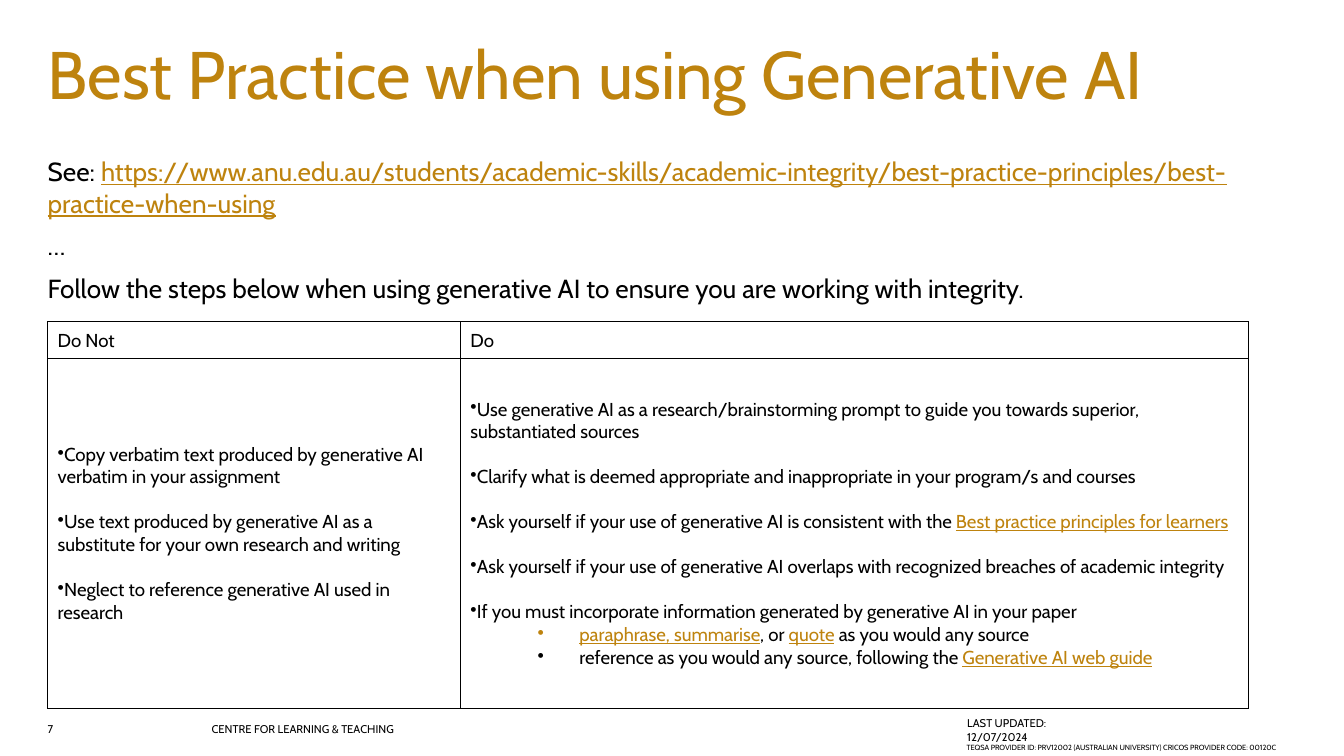
from lxml.etree import SubElement
from pptx import Presentation
from pptx.dml.color import RGBColor
from pptx.enum.text import MSO_ANCHOR, MSO_AUTO_SIZE, PP_ALIGN
from pptx.oxml.ns import qn
from pptx.util import Cm, Pt

GOLD = RGBColor(0xBE, 0x83, 0x0E)
BLACK = RGBColor(0, 0, 0)
FONT = "Cabin"
LEFT = Cm(0.9)
FOOTER_TOP = Cm(13.64)

INTRO = [
    [("See: ", BLACK), ("https://www.anu.edu.au/students/academic-skills/academic-integrity/"
                        "best-practice-principles/best-practice-when-using", GOLD)],
    [("…", BLACK)],
    [("Follow the steps below when using generative AI to ensure you are working with integrity.", BLACK)],
]
DO_NOT = [
    [("Copy verbatim text produced by generative AI verbatim in your assignment", BLACK)],
    [("Use text produced by generative AI as a substitute for your own research and writing", BLACK)],
    [("Neglect to reference generative AI used in research", BLACK)],
]
DO = [
    [("Use generative AI as a research/brainstorming prompt to guide you towards superior, "
      "substantiated sources", BLACK)],
    [("Clarify what is deemed appropriate and inappropriate in your program/s and courses", BLACK)],
    [("Ask yourself if your use of generative AI is consistent with the ", BLACK),
     ("Best practice principles for learners", GOLD)],
    [("Ask yourself if your use of generative AI overlaps with recognized breaches of "
      "academic integrity", BLACK)],
    [("If you must incorporate information generated by generative AI in your paper", BLACK)],
]
DO_DETAILS = [
    [("paraphrase, summarise", GOLD), (", or ", BLACK), ("quote", GOLD),
     (" as you would any source", BLACK)],
    [("reference as you would any source, following the ", BLACK), ("Generative AI web guide", GOLD)],
]


def add_run(p, text, size, color, underline=False):
    r = p.add_run()
    r.text = text
    r.font.name = FONT
    r.font.size = Pt(size)
    r.font.color.rgb = color
    r.font.underline = underline


def add_runs(p, runs, size):
    for text, color in runs:
        add_run(p, text, size, color, underline=color == GOLD)


def next_paragraph(tf):
    p = tf.paragraphs[0]
    return tf.add_paragraph() if p.runs else p


def set_bullet(p, char=None, margin=0, indent=0):
    pPr = p._p.get_or_add_pPr()
    pPr.set("marL", str(margin))
    pPr.set("indent", str(indent))
    if char:
        SubElement(pPr, qn("a:buChar")).set("char", char)
    else:
        SubElement(pPr, qn("a:buNone"))


def setup_frame(sp, left, top, width, height, anchor=MSO_ANCHOR.TOP):
    sp.left, sp.top, sp.width, sp.height = left, top, width, height
    tf = sp.text_frame
    tf.word_wrap = True
    tf.auto_size = MSO_AUTO_SIZE.NONE
    tf.vertical_anchor = anchor
    tf.margin_left = tf.margin_right = tf.margin_top = tf.margin_bottom = 0
    return tf


def fill_title(sp, text):
    tf = setup_frame(sp, LEFT, Cm(0.9), Cm(23.5), Cm(2.06))
    p = tf.paragraphs[0]
    p.alignment = PP_ALIGN.LEFT
    p.line_spacing = 0.8
    add_run(p, text, 36, GOLD)


def fill_body(sp, paragraphs):
    tf = setup_frame(sp, LEFT, Cm(2.94), Cm(23.5), Cm(10.44))
    for runs in paragraphs:
        p = next_paragraph(tf)
        set_bullet(p)
        p.space_before = Pt(0)
        p.space_after = Pt(6)
        add_runs(p, runs, 14)


def add_label(s, text, left, top, width, height, size=6, anchor=MSO_ANCHOR.TOP):
    sp = s.shapes.add_textbox(left, top, width, height)
    tf = setup_frame(sp, left, top, width, height, anchor)
    add_run(tf.paragraphs[0], text, size, BLACK)


def format_cell(cell):
    cell.vertical_anchor = MSO_ANCHOR.MIDDLE
    cell.margin_left = cell.margin_right = Cm(0.19)
    cell.margin_top = cell.margin_bottom = Cm(0.03)
    tcPr = cell._tc.get_or_add_tcPr()
    for side in ("lnL", "lnR", "lnT", "lnB"):
        ln = SubElement(tcPr, qn(f"a:{side}"), w=str(Pt(0.75)))
        fill = SubElement(ln, qn("a:solidFill"))
        SubElement(fill, qn("a:srgbClr"), val=str(BLACK))
    cell.fill.background()


def add_bullets(tf, items, gap=0, margin=0, indent=0):
    for i, runs in enumerate(items, 1):
        p = next_paragraph(tf)
        set_bullet(p, "•", margin, indent)
        if i < len(items):
            p.space_after = Pt(gap)
        add_runs(p, runs, 10)


def add_practice_table(s):
    widths, heights = (Cm(7.8), Cm(14.9)), (Cm(0.7), Cm(6.6))
    table = s.shapes.add_table(2, 2, LEFT, Cm(6.08), sum(widths), sum(heights)).table
    table.first_row = table.horz_banding = False
    for i, (width, height) in enumerate(zip(widths, heights)):
        table.columns[i].width = width
        table.rows[i].height = height
    for cell in table.iter_cells():
        format_cell(cell)
    for col, (heading, items) in enumerate((("Do Not", DO_NOT), ("Do", DO))):
        add_run(table.cell(0, col).text_frame.paragraphs[0], heading, 10, BLACK)
        add_bullets(table.cell(1, col).text_frame, items, gap=12)
    add_bullets(table.cell(1, 1).text_frame, DO_DETAILS, margin=Cm(2.06), indent=-Cm(0.79))


def main():
    prs = Presentation()
    prs.slide_width, prs.slide_height = Cm(25.4), Cm(14.28)
    s = prs.slides.add_slide(prs.slide_layouts[1])
    fill_title(s.shapes.title, "Best Practice when using Generative AI")
    fill_body(s.placeholders[1], INTRO)
    add_practice_table(s)
    add_label(s, "7", LEFT, FOOTER_TOP, Cm(1), Cm(0.3))
    add_label(s, "CENTRE FOR LEARNING & TEACHING", Cm(4), FOOTER_TOP, Cm(14), Cm(0.3))
    add_label(s, "LAST UPDATED: 12/07/2024", Cm(18.28), FOOTER_TOP, Cm(2), Cm(0.3),
              anchor=MSO_ANCHOR.MIDDLE)
    add_label(s, "TEQSA PROVIDER ID: PRV12002 (AUSTRALIAN UNIVERSITY) CRICOS PROVIDER CODE: 00120C",
              Cm(18.27), Cm(14.04), Cm(9.17), Cm(0.46), size=4)
    prs.save("out.pptx")


if __name__ == "__main__":
    main()
